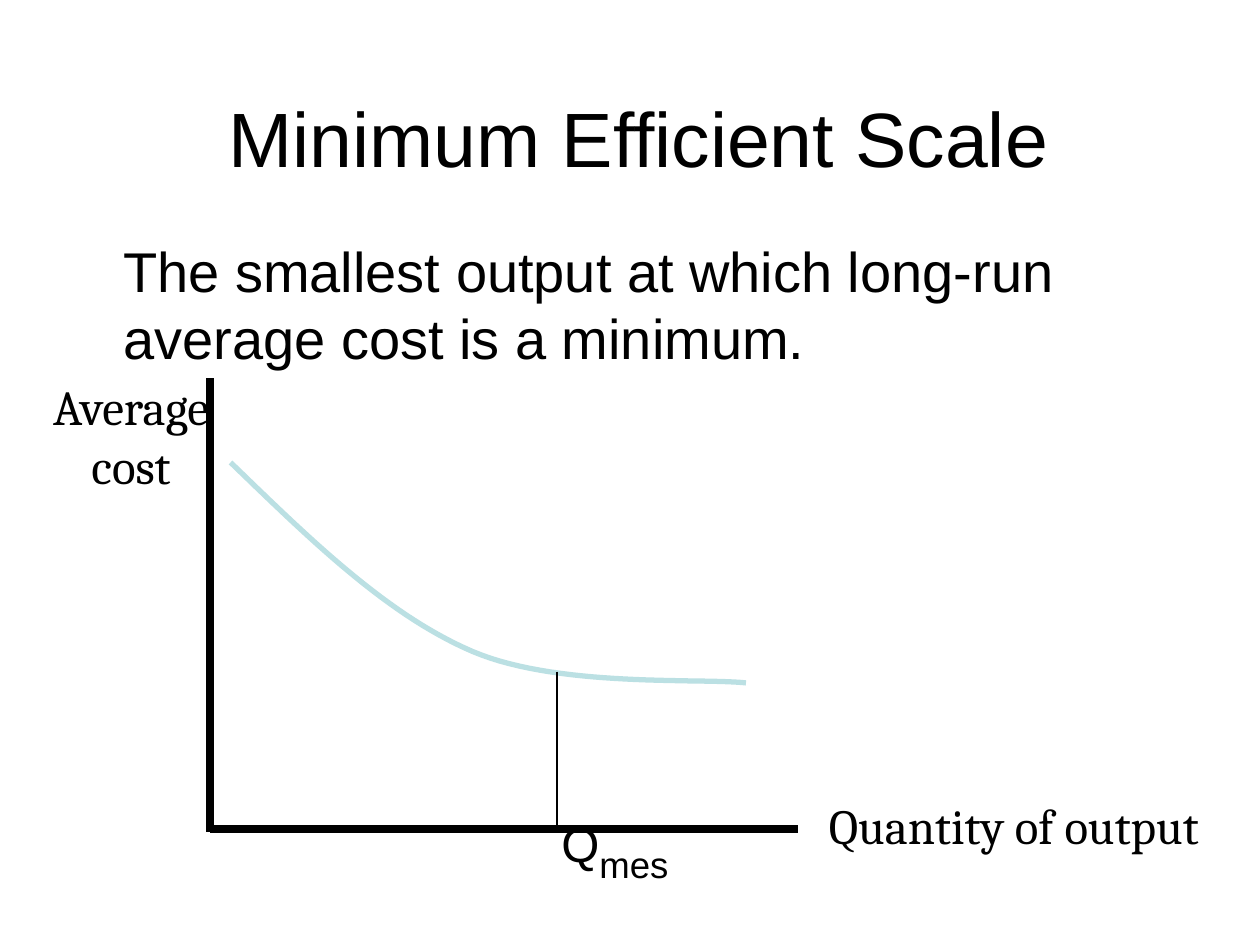
import pptx
import pptx.dml.color
import pptx.enum.shapes
import pptx.enum.text
import pptx.oxml
import pptx.oxml.ns
import pptx.util

Inches = pptx.util.Inches
Pt = pptx.util.Pt
Align = pptx.enum.text.PP_ALIGN
Anchor = pptx.enum.text.MSO_ANCHOR


def color(hex_string):
    return pptx.dml.color.RGBColor.from_string(hex_string)


def bezier_points(start, control_1, control_2, end, steps=30):
    """Sample a cubic curve, leaving out its start point."""
    points = []
    for step in range(1, steps + 1):
        t = step / steps
        weights = ((1 - t) ** 3, 3 * t * (1 - t) ** 2, 3 * t ** 2 * (1 - t), t ** 3)
        corners = (start, control_1, control_2, end)
        points.append(tuple(
            sum(weight * corner[axis] for weight, corner in zip(weights, corners))
            for axis in (0, 1)))
    return points


class SlideBuilder:
    INK = "000000"
    CURVE = "BBE0E3"
    SANS = "Arial"
    SERIF = "Cambria"

    def __init__(self, slide):
        self.slide = slide

    def text(self, box, runs, font, align=Align.CENTER, anchor=Anchor.BOTTOM,
             indent=0, space_before=0):
        """Add one paragraph; runs are (text, size, baseline percent)."""
        shape = self.slide.shapes.add_textbox(*map(Inches, box))
        frame = shape.text_frame
        frame.word_wrap = True
        frame.vertical_anchor = anchor
        paragraph = frame.paragraphs[0]
        paragraph.alignment = align
        paragraph.space_before = Pt(space_before)
        if indent:
            paragraph._p.get_or_add_pPr().set("marL", str(Inches(indent)))
        for content, size, baseline in runs:
            run = paragraph.add_run()
            run.text = content
            run.font.name = font
            run.font.size = Pt(size)
            run.font.color.rgb = color(self.INK)
            if baseline:
                run.font._element.set("baseline", str(baseline * 1000))

    def line(self, start, end, width):
        connector = self.slide.shapes.add_connector(
            pptx.enum.shapes.MSO_CONNECTOR.STRAIGHT, *map(Inches, start + end))
        connector.line.color.rgb = color(self.INK)
        connector.line.width = Pt(width)
        connector._element.spPr.append(pptx.oxml.parse_xml(
            f"<a:effectLst {pptx.oxml.ns.nsdecls('a')}/>"))

    def curve(self, start, segments, width):
        points = [start]
        for segment in segments:
            points += bezier_points(points[-1], *segment)
        lengths = [(Inches(x), Inches(y)) for x, y in points]
        builder = self.slide.shapes.build_freeform(*lengths[0])
        builder.add_line_segments(lengths[1:], close=False)
        shape = builder.convert_to_shape()
        shape.shadow.inherit = False
        shape.fill.background()
        shape.line.color.rgb = color(self.CURVE)
        shape.line.width = Pt(width)


def main():
    presentation = pptx.Presentation()
    presentation.slide_width = Inches(10)
    presentation.slide_height = Inches(7.5)
    slide = presentation.slides.add_slide(presentation.slide_layouts[6])
    builder = SlideBuilder(slide)

    builder.text((1.25, 0.25, 7.64, 1.25),
                 [("Minimum Efficient Scale", 44, 0)], builder.SANS)
    builder.text((0.5, 1.83, 8.94, 1.25),
                 [("The smallest output at which long-run average cost is a minimum.", 32, 0)],
                 builder.SANS, Align.LEFT, Anchor.TOP, indent=0.38, space_before=4)

    axis_x, axis_y, mes_x = 1.67, 6.58, 4.42
    builder.line((axis_x, 3), (axis_x, 6.6), 4.5)
    builder.line((axis_x, axis_y), (6.33, axis_y), 4.5)
    builder.text((6.42, 6.03, 3.25, 0.8), [("Quantity of output", 28, 0)], builder.SERIF)
    builder.text((0.25, 3.17, 1.58, 0.8), [("Average cost", 28, 0)], builder.SERIF)

    builder.curve((1.83, 3.67),
                  [((2.45, 4.27), (3.07, 4.88), (3.75, 5.17)),
                   ((4.43, 5.46), (5.56, 5.38), (5.92, 5.42))], 3)
    builder.line((mes_x, 5.33), (mes_x, axis_y), 0.75)
    builder.text((4.17, 6.28, 1.42, 0.8), [("Q", 28, 0), ("mes", 36, -25)], builder.SANS)

    presentation.save("out.pptx")


if __name__ == "__main__":
    main()
